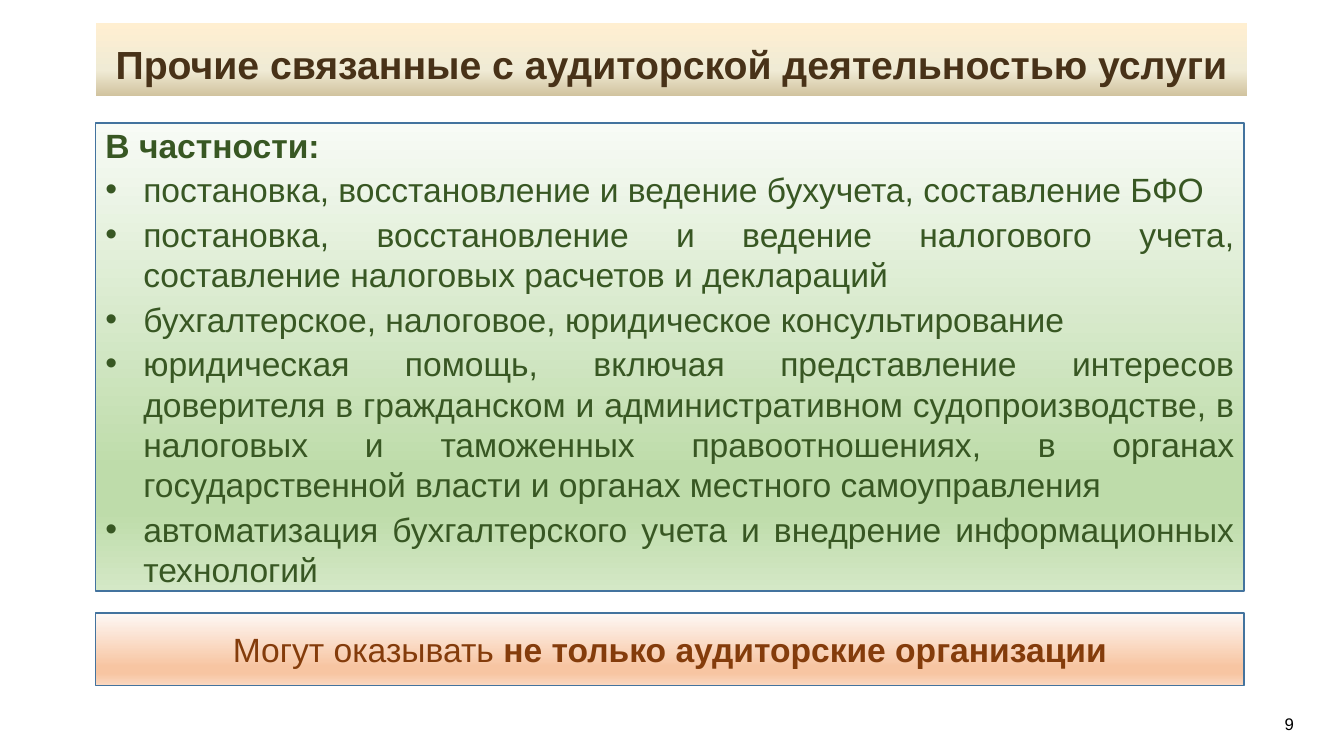
from lxml.etree import SubElement
from pptx import Presentation
from pptx.dml.color import RGBColor
from pptx.enum.shapes import MSO_SHAPE
from pptx.enum.text import MSO_ANCHOR, PP_ALIGN
from pptx.oxml.ns import qn
from pptx.util import Pt

PX = 9525
LEFT = 91
INDENT = 36


class Theme:
    """Colours, gradients and type sizes of the slide."""
    font = "Arial"
    title_size, body_size, number_size = 28, 24, 12
    title, body, note, number = "483218", "385723", "843C0B", "000000"
    border = "43739E"
    sand = [(0, "FFEFD1"), (65, "F0EBD5"), (100, "D1C39F")]
    green = [(0, "F8FBF6"), (74, "BEDCAA"), (83, "BEDCAA"), (100, "D4E8C6")]
    peach = [(0, "FEF8F5"), (74, "F7C5A2"), (83, "F7C5A2"), (100, "FAD8C1")]


SERVICES = [
    "постановка, восстановление и ведение бухучета, составление БФО",
    "постановка, восстановление и ведение налогового учета, "
    "составление налоговых расчетов и деклараций",
    "бухгалтерское, налоговое, юридическое консультирование",
    "юридическая помощь, включая представление интересов доверителя "
    "в гражданском и административном судопроизводстве, в налоговых "
    "и таможенных правоотношениях, в органах государственной власти "
    "и органах местного самоуправления",
    "автоматизация бухгалтерского учета и внедрение информационных технологий",
]


def set_attrs(obj, values):
    """Set each named attribute of an object."""
    for name, value in values.items():
        setattr(obj, name, value)


def fill_gradient(sp, stops):
    """Fill a shape with a top-to-bottom gradient."""
    sp.fill.gradient()
    sp.fill.gradient_angle = 270
    stop_list = next(sp._element.spPr.iter(qn("a:gsLst")))
    stop_list.clear()
    for percent, color in stops:
        gs = SubElement(stop_list, qn("a:gs"), pos=str(percent * 1000))
        SubElement(gs, qn("a:srgbClr"), val=color)


def add_panel(slide, box, stops, border=None):
    """Add a gradient rectangle and return its text frame."""
    sp = slide.shapes.add_shape(MSO_SHAPE.RECTANGLE, *(v * PX for v in box))
    sp.shadow.inherit = False
    fill_gradient(sp, stops)
    if border:
        sp.line.color.rgb = RGBColor.from_string(border)
        sp.line.width = Pt(1)
    else:
        sp.line.fill.background()
    set_attrs(sp.text_frame, {"word_wrap": True, "vertical_anchor": MSO_ANCHOR.MIDDLE})
    return sp.text_frame


def write(p, runs, size, color, **layout):
    """Write (text, bold) runs into a paragraph."""
    set_attrs(p, layout)
    for text, bold in runs:
        r = p.add_run()
        r.text = text
        set_attrs(r.font, {"name": Theme.font, "size": Pt(size), "bold": bold})
        r.font.color.rgb = RGBColor.from_string(color)


def add_bullet(tf, text):
    """Add a justified bullet paragraph with a hanging indent."""
    p = tf.add_paragraph()
    write(p, [(text, False)], Theme.body_size, Theme.body,
          alignment=PP_ALIGN.JUSTIFY, space_before=Pt(3))
    pPr = p._p.get_or_add_pPr()
    pPr.set("marL", str(INDENT * PX))
    pPr.set("indent", str(-INDENT * PX))
    SubElement(pPr, qn("a:buFont"), typeface=Theme.font)
    SubElement(pPr, qn("a:buChar"), char="•")


def add_number(slide, box, text):
    """Add the slide number."""
    tf = slide.shapes.add_textbox(*(v * PX for v in box)).text_frame
    tf.word_wrap = True
    write(tf.paragraphs[0], [(text, False)], Theme.number_size, Theme.number)


def main():
    """Build and save the slide."""
    prs = Presentation()
    set_attrs(prs, {"slide_width": 1280 * PX, "slide_height": 720 * PX})
    slide = prs.slides.add_slide(prs.slide_layouts[6])

    tf = add_panel(slide, (LEFT, 22, 1097, 69), Theme.sand)
    write(tf.paragraphs[0],
          [("Прочие связанные с аудиторской деятельностью услуги", True)],
          Theme.title_size, Theme.title, alignment=PP_ALIGN.CENTER, line_spacing=1.2)

    tf = add_panel(slide, (LEFT, 117, 1094, 446), Theme.green, Theme.border)
    write(tf.paragraphs[0], [("В частности:", True)],
          Theme.body_size, Theme.body, alignment=PP_ALIGN.JUSTIFY)
    for service in SERVICES:
        add_bullet(tf, service)

    tf = add_panel(slide, (LEFT, 584, 1094, 69), Theme.peach, Theme.border)
    write(tf.paragraphs[0],
          [("Могут оказывать ", False), ("не только аудиторские организации", True)],
          Theme.body_size, Theme.note, alignment=PP_ALIGN.CENTER)

    add_number(slide, (1214, 675, 39, 29), "9")
    prs.save("out.pptx")


if __name__ == "__main__":
    main()
